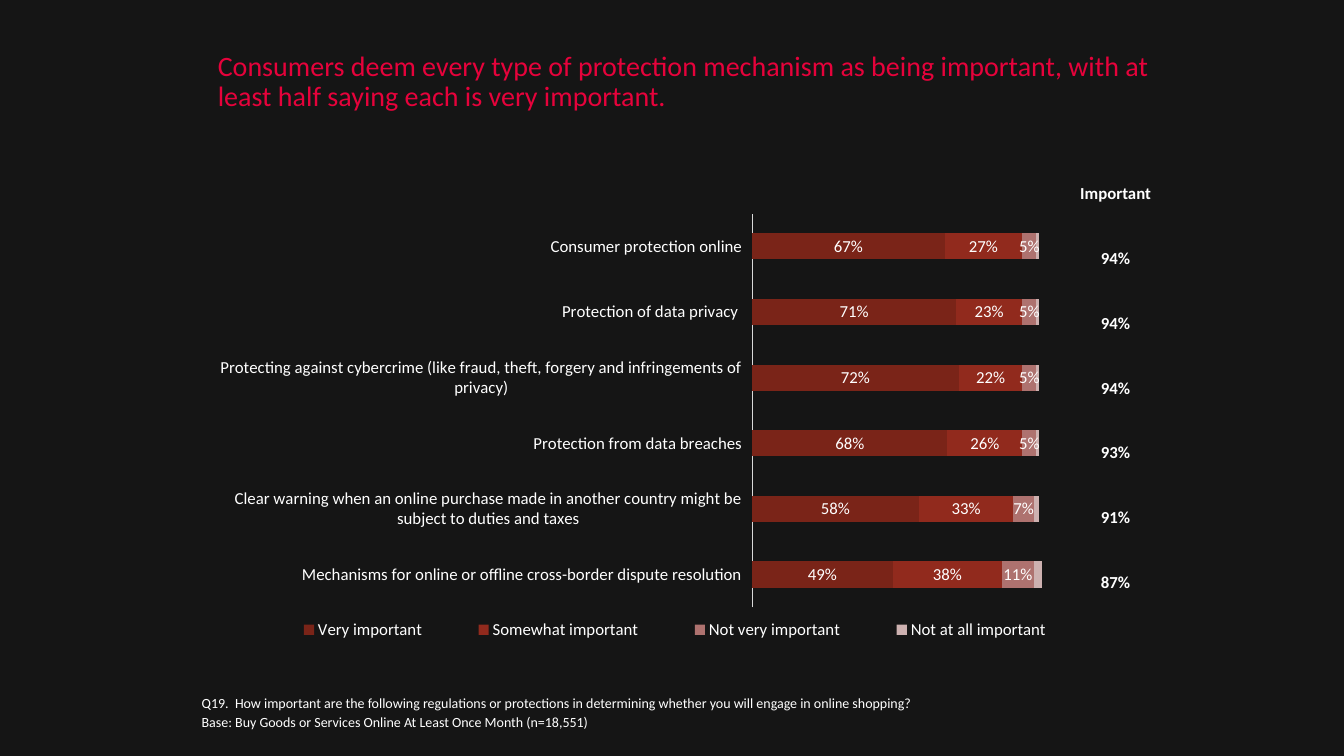
from typing import NamedTuple

from lxml.etree import SubElement
from pptx import Presentation
from pptx.chart.data import CategoryChartData
from pptx.dml.color import RGBColor
from pptx.enum.chart import XL_CHART_TYPE as ChartType
from pptx.enum.chart import XL_LABEL_POSITION as LabelPos
from pptx.enum.chart import XL_LEGEND_POSITION as LegendPos
from pptx.enum.chart import XL_TICK_LABEL_POSITION as TickLabelPos
from pptx.enum.chart import XL_TICK_MARK as TickMark
from pptx.enum.text import MSO_ANCHOR as Anchor
from pptx.enum.text import MSO_AUTO_SIZE as AutoSize
from pptx.enum.text import PP_ALIGN as Align
from pptx.oxml.ns import qn
from pptx.util import Pt

EMU_PER_PX = 9144  # 100 px to the inch
FONT = "Calibri"
NO_STYLE_NO_GRID = "{2D5ABB26-0587-4C30-8999-92F81FD0307C}"
COLORS = {"background": "151515", "title": "E6023B", "text": "FFFFFF", "axis": "D9D9D9",
          "very": "7A2418", "somewhat": "912A1D", "not_very": "AE726F", "not_at_all": "CDB1B0"}


class Box(NamedTuple):
    left: int
    top: int
    width: int
    height: int

    def emu(self) -> tuple[int, ...]:
        return tuple(px(v) for v in self)


class Rating(NamedTuple):
    name: str
    color: str
    values: tuple[float, ...]
    labelled: bool = True


MECHANISMS = (
    "Consumer protection online",
    "Protection of data privacy ",
    "Protecting against cybercrime (like fraud, theft, forgery and infringements of privacy)",
    "Protection from data breaches",
    "Clear warning when an online purchase made in another country might be "
    "subject to duties and taxes",
    "Mechanisms for online or offline cross-border dispute resolution",
)
RATINGS = (
    Rating("Very important", "very", (0.67, 0.71, 0.72, 0.68, 0.58, 0.49)),
    Rating("Somewhat important", "somewhat", (0.27, 0.23, 0.22, 0.26, 0.33, 0.38)),
    Rating("Not very important", "not_very", (0.05, 0.05, 0.05, 0.05, 0.07, 0.11)),
    Rating("Not at all important", "not_at_all", (0.01, 0.01, 0.01, 0.01, 0.02, 0.03), False),
)
IMPORTANT = ("Important", "94%", "94%", "94%", "93%", "91%", "87%")
TITLE = ("Consumers deem every type of protection mechanism as being important, "
         "with at least half saying each is very important.")
QUESTION = (
    "Q19.  How important are the following regulations or protections in determining "
    "whether you will engage in online shopping?",
    "Base: Buy Goods or Services Online At Least Once Month (n=18,551)",
)


def px(value: int) -> int:
    return value * EMU_PER_PX


def rgb(name: str) -> RGBColor:
    return RGBColor.from_string(COLORS[name])


def style_font(font, size: int, color: str = "text", bold: bool = False) -> None:
    font.name, font.size, font.bold = FONT, Pt(size), bold
    font.color.rgb = rgb(color)


def write_text(tf, *lines: str, size: int, color: str = "text", bold: bool = False,
               align=Align.LEFT, spacing: float = 1.0, before: int = 0) -> None:
    for i, line in enumerate(lines):
        p = tf.add_paragraph() if i else tf.paragraphs[0]
        pPr = p._p.get_or_add_pPr()
        pPr.set("marL", "0")
        pPr.set("indent", "0")
        SubElement(pPr, qn("a:buNone"))
        p.alignment, p.line_spacing = align, spacing
        p.space_before = Pt(before if i else 0)
        r = p.add_run()
        r.text = line
        style_font(r.font, size, color, bold)


def fill_placeholder(sp, box: Box, anchor, *lines: str, **fmt) -> None:
    sp.left, sp.top, sp.width, sp.height = box.emu()
    tf = sp.text_frame
    tf.word_wrap, tf.auto_size, tf.vertical_anchor = True, AutoSize.NONE, anchor
    write_text(tf, *lines, **fmt)


def set_layout(element, index: int, inner: bool, **fractions: float) -> None:
    """Place a plot area or legend by fractions of the chart."""
    for old in element.findall(qn("c:layout")):
        element.remove(old)
    layout = element.makeelement(qn("c:layout"))
    element.insert(index, layout)
    manual = SubElement(layout, qn("c:manualLayout"))
    if inner:
        SubElement(manual, qn("c:layoutTarget")).set("val", "inner")
    for mode in ("xMode", "yMode"):
        SubElement(manual, qn(f"c:{mode}")).set("val", "edge")
    for key, value in fractions.items():
        SubElement(manual, qn(f"c:{key}")).set("val", str(value))


def add_ratings_chart(s, box: Box) -> None:
    data = CategoryChartData(number_format="0%")
    data.categories = MECHANISMS
    for rating in RATINGS:
        data.add_series(rating.name, rating.values)
    chart = s.shapes.add_chart(ChartType.BAR_STACKED, *box.emu(), data).chart
    chart.has_title = False
    style_font(chart.font, 10)

    plot = chart.plots[0]
    plot.gap_width, plot.overlap, plot.vary_by_categories = 150, 100, False
    for series, rating in zip(plot.series, RATINGS):
        series.format.fill.solid()
        series.format.fill.fore_color.rgb = rgb(rating.color)
        if rating.labelled:
            labels = series.data_labels
            style_font(labels.font, 12)
            labels.number_format, labels.number_format_is_linked = "0%", False
            labels.position, labels.show_value = LabelPos.CENTER, True

    mechanisms = chart.category_axis
    mechanisms.reverse_order = True
    mechanisms.major_tick_mark = mechanisms.minor_tick_mark = TickMark.NONE
    mechanisms.tick_label_position = TickLabelPos.LOW
    style_font(mechanisms.tick_labels.font, 12)
    mechanisms.format.line.color.rgb = rgb("axis")
    mechanisms.format.line.width = Pt(0.75)

    shares = chart.value_axis
    shares.minimum_scale, shares.maximum_scale = 0, 1.2
    shares.has_major_gridlines = shares.visible = False

    chart.has_legend = True
    legend = chart.legend
    legend.position, legend.include_in_layout = LegendPos.BOTTOM, False
    style_font(legend.font, 12)
    set_layout(chart._chartSpace.chart.plotArea, 0, True, x=0.6, y=0.02, w=0.38, h=0.88)
    set_layout(legend._element, 1, False, x=0.05, y=0.91, w=0.93, h=0.08)


def add_important_table(s, box: Box) -> None:
    table = s.shapes.add_table(len(IMPORTANT), 1, *box.emu()).table
    table.first_row = table.horz_banding = False
    table._tbl.tblPr.find(qn("a:tableStyleId")).text = NO_STYLE_NO_GRID
    for i, value in enumerate(IMPORTANT):
        cell = table.cell(i, 0)
        cell.fill.background()
        cell.vertical_anchor = Anchor.MIDDLE
        cell.margin_left = cell.margin_top = cell.margin_right = px(1)
        cell.margin_bottom = 0
        write_text(cell.text_frame, value, size=12, bold=True, align=Align.CENTER)


def main() -> None:
    prs = Presentation()
    prs.slide_width, prs.slide_height = px(1333), px(750)
    s = prs.slides.add_slide(prs.slide_layouts[1])
    s.background.fill.solid()
    s.background.fill.fore_color.rgb = rgb("background")
    fill_placeholder(s.placeholders[1], Box(190, 685, 794, 45), Anchor.BOTTOM, *QUESTION,
                     size=10, spacing=0.95, before=2)
    fill_placeholder(s.shapes.title, Box(206, 51, 946, 61), Anchor.MIDDLE, TITLE,
                     size=20, color="title", spacing=0.9)
    add_ratings_chart(s, Box(206, 203, 900, 444))
    add_important_table(s, Box(1052, 160, 109, 450))
    prs.save("out.pptx")


if __name__ == "__main__":
    main()
